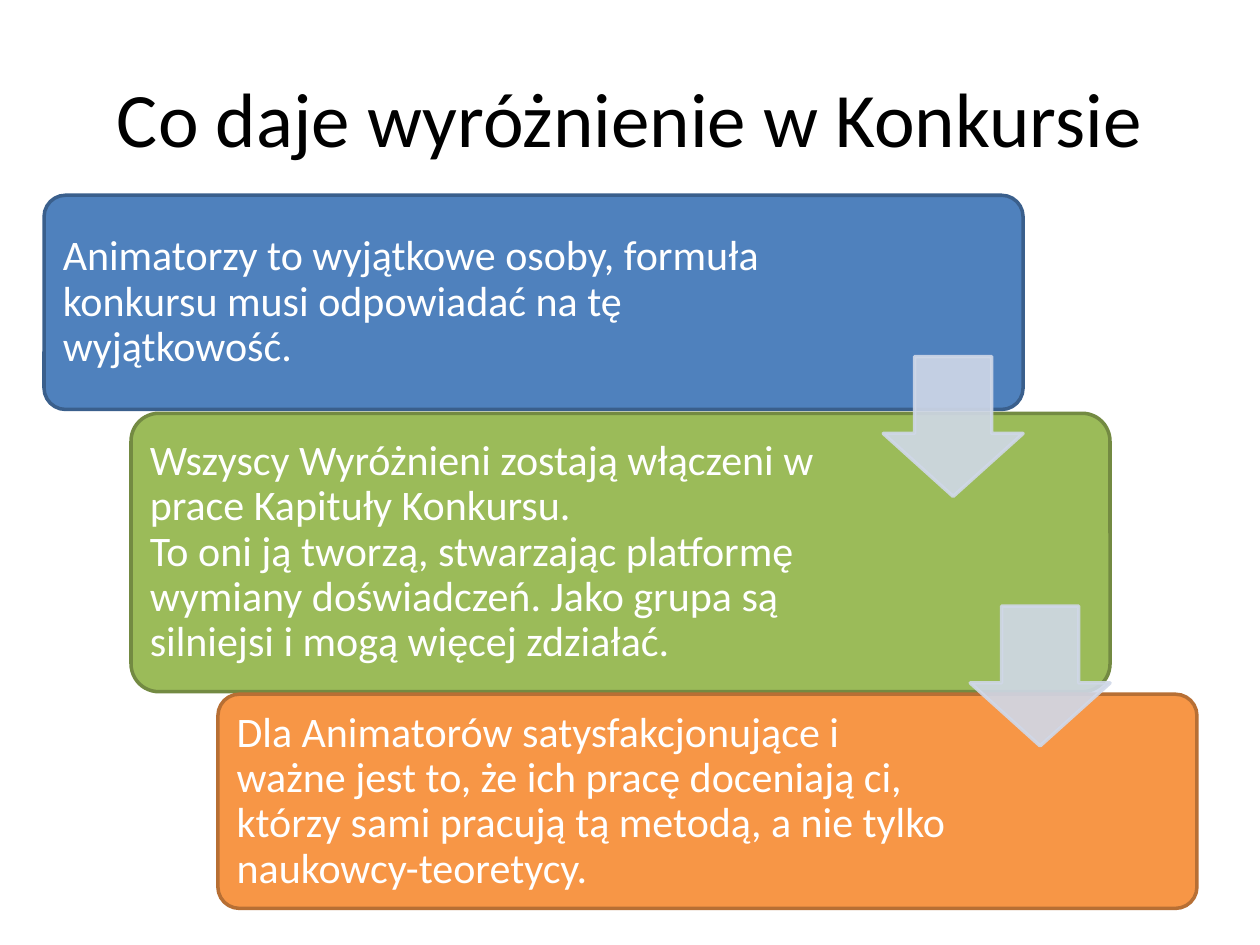
from pptx import Presentation
from pptx.dml.color import RGBColor
from pptx.enum.shapes import MSO_SHAPE
from pptx.enum.text import MSO_ANCHOR, PP_ALIGN
from pptx.oxml.ns import qn
from pptx.util import Inches, Pt
from lxml import etree

ROUNDED, DOWN_ARROW = MSO_SHAPE.ROUNDED_RECTANGLE, MSO_SHAPE.DOWN_ARROW
MIDDLE = MSO_ANCHOR.MIDDLE
CENTER, LEFT = PP_ALIGN.CENTER, PP_ALIGN.LEFT

BLACK = RGBColor(0x00, 0x00, 0x00)
WHITE = RGBColor(0xFF, 0xFF, 0xFF)
BLUE, DARK_BLUE = RGBColor(0x4F, 0x81, 0xBD), RGBColor(0x3A, 0x5F, 0x8C)
GREEN, DARK_GREEN = RGBColor(0x9B, 0xBB, 0x59), RGBColor(0x73, 0x8A, 0x42)
ORANGE, DARK_ORANGE = RGBColor(0xF7, 0x96, 0x46), RGBColor(0xB7, 0x6F, 0x34)
PALE_BLUE = RGBColor(0xD0, 0xD8, 0xE8)

FONT = "Calibri"
STEP_LEFT, STEP_SHIFT, STEP_WIDTH = 0.35, 0.69, 7.77
ARROW_SIZE, ARROW_OPACITY = 1.11, 90

# top, height, text width, fill, outline, text
STEPS = [
    (1.55, 1.7, 5.94, BLUE, DARK_BLUE,
     "Animatorzy to wyjątkowe osoby, formuła konkursu musi odpowiadać na tę "
     "wyjątkowość."),
    (3.28, 2.21, 5.85, GREEN, DARK_GREEN,
     "Wszyscy Wyróżnieni zostają włączeni w prace Kapituły Konkursu. \v"
     "To oni ją tworzą, stwarzając platformę wymiany doświadczeń. Jako grupa "
     "są silniejsi i mogą więcej zdziałać."),
    (5.51, 1.7, 5.88, ORANGE, DARK_ORANGE,
     "Dla Animatorów satysfakcjonujące i ważne jest to, że ich pracę "
     "doceniają ci, którzy sami pracują tą metodą, a nie tylko "
     "naukowcy-teoretycy."),
]
ARROW_TOPS = [2.83, 4.81]


def add_text(page, box, text, size, color, align, inset=0.1):
    frame = page.shapes.add_textbox(*map(Inches, box)).text_frame
    frame.word_wrap = True
    frame.vertical_anchor = MIDDLE
    frame.margin_left = frame.margin_right = Inches(inset)
    frame.margin_top = frame.margin_bottom = Inches(inset)
    para = frame.paragraphs[0]
    para.text = text
    para.alignment = align
    para.font.name, para.font.size = FONT, Pt(size)
    para.font.color.rgb = color
    return para


def add_figure(page, kind, box, adjustments, fill, outline):
    figure = page.shapes.add_shape(kind, *map(Inches, box))
    figure.shadow.inherit = False
    for index, value in enumerate(adjustments):
        figure.adjustments[index] = value
    figure.fill.solid()
    figure.fill.fore_color.rgb = fill
    figure.line.color.rgb = outline
    figure.line.width = Pt(2)
    return figure


def add_step(page, box, text_width, fill, outline, text):
    left, top, _, height = box
    add_figure(page, ROUNDED, box, [0.1], fill, outline)
    inset = 0.03 * height
    text_box = (left + 0.05, top + inset, text_width, height - 2 * inset)
    para = add_text(page, text_box, text, 24, WHITE, LEFT)
    para.line_spacing = 0.9


def add_arrow(page, box):
    arrow = add_figure(page, DOWN_ARROW, box, [0.55, 0.45], PALE_BLUE, PALE_BLUE)
    for color in arrow.fill._xPr.iter(qn("a:srgbClr")):
        etree.SubElement(color, qn("a:alpha")).set("val", str(ARROW_OPACITY * 1000))


def add_staircase(page):
    """Steps shifted right one by one, with an arrow at each step's right edge."""
    lefts = [STEP_LEFT + index * STEP_SHIFT for index in range(len(STEPS))]
    for left, (top, height, *content) in zip(lefts, STEPS):
        add_step(page, (left, top, STEP_WIDTH, height), *content)
    for left, top in zip(lefts, ARROW_TOPS):
        arrow_left = left + STEP_WIDTH - ARROW_SIZE
        add_arrow(page, (arrow_left, top, ARROW_SIZE, ARROW_SIZE))


def main():
    deck = Presentation()
    deck.slide_width, deck.slide_height = Inches(10), Inches(7.5)
    page = deck.slides.add_slide(deck.slide_layouts[6])
    add_text(page, (0.5, 0.3, 9, 1.25), "Co daje wyróżnienie w Konkursie",
             44, BLACK, CENTER)
    add_staircase(page)
    deck.save("out.pptx")


if __name__ == "__main__":
    main()
